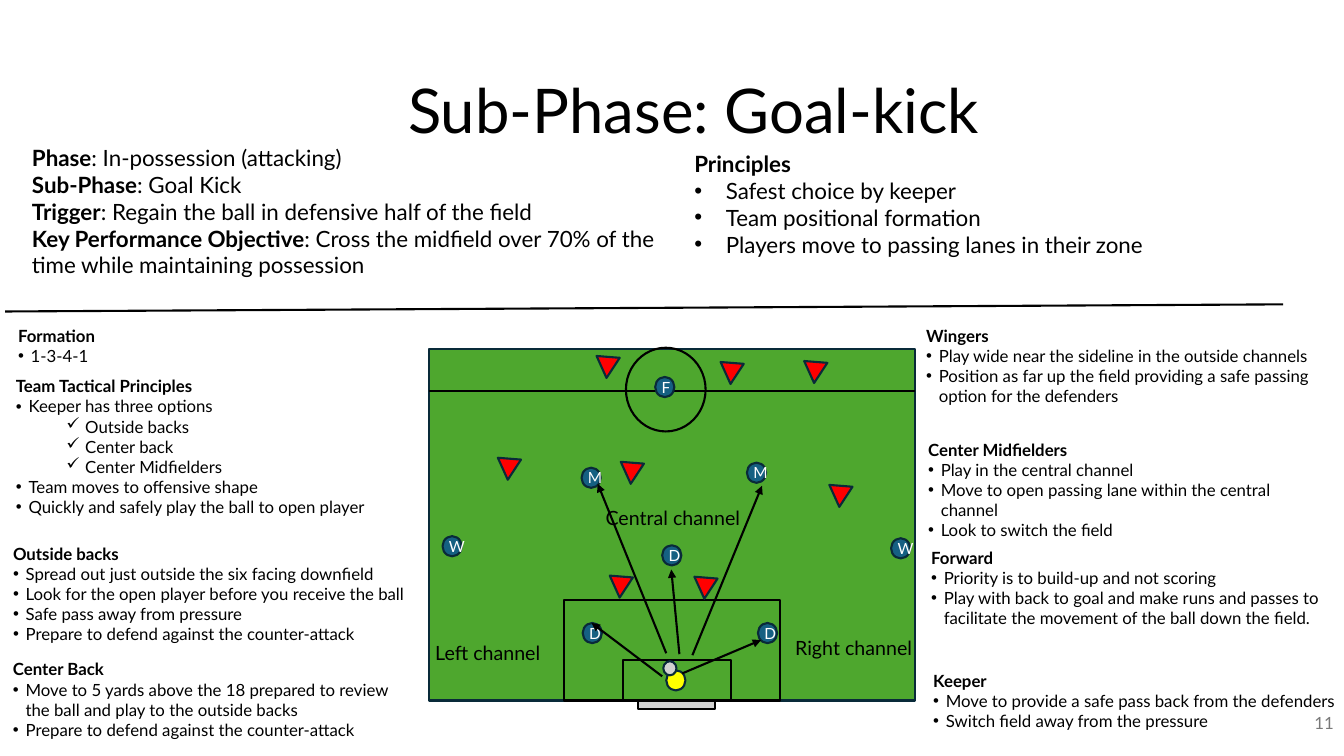
from dataclasses import dataclass

from lxml.etree import SubElement
from pptx import Presentation
from pptx.dml.color import RGBColor
from pptx.enum.shapes import MSO_CONNECTOR as Connector, MSO_SHAPE as Preset
from pptx.enum.text import MSO_ANCHOR as Anchor, MSO_AUTO_SIZE as AutoSize, PP_ALIGN as Align
from pptx.oxml.ns import qn
from pptx.util import Pt

FONT = "Lato"
BLACK, WHITE, GREY, NAVY = "000000", "FFFFFF", "D1D1D1", "092A39"
GREEN, RED, BLUE, YELLOW = "4EA72E", "FF0000", "156082", "FFFF00"
PLAYER_SIZE = (13.7, 14.4)
OPPONENT_SIZE = (16.6, 15.1)


@dataclass
class Line:
    text: str
    lead: str = ""
    bullet: str = ""


@dataclass
class Block:
    left: float
    top: float
    width: float
    height: float
    lines: list[Line]
    size: float = 12
    indent: float = 9


@dataclass
class Label:
    text: str
    left: float
    top: float
    width: float
    height: float = 24.5
    size: float = 14
    align: Align = Align.LEFT
    color: str = BLACK
    anchor: Anchor = Anchor.TOP
    wrap: bool = False
    spacing: float = 1.0


@dataclass
class Marking:
    left: float
    top: float
    width: float
    height: float
    fill: str = ""
    preset: Preset = Preset.RECTANGLE
    line: str = BLACK


@dataclass
class Player:
    role: str
    left: float
    top: float


def listing(heading: str, *items: str) -> list[Line]:
    """A bold heading with bulleted items; items starting with ✓ are one level deeper."""
    lines = [Line("", lead=heading)]
    for item in items:
        bullet = "✓" if item.startswith("✓") else "•"
        lines.append(Line(item.removeprefix("✓ "), bullet=bullet))
    return lines


BLOCKS = [
    Block(15.8, 99.4, 480.2, 123.8, [
        Line(": In-possession (attacking)", "Phase"),
        Line(": Goal Kick", "Sub-Phase"),
        Line(": Regain the ball in defensive half of the field", "Trigger"),
        Line(": Cross the midfield over 70% of the time while maintaining possession",
             "Key Performance Objective")], size=16),
    Block(488.9, 103.7, 480.2, 85, listing(
        "Principles", "Safest choice by keeper", "Team positional formation",
        "Players move to passing lanes in their zone"), size=16, indent=22.5),
    Block(5.8, 229, 294.5, 36, listing("Formation", "1-3-4-1")),
    Block(4.3, 265, 294.5, 123.8, listing(
        "Team Tactical Principles", "Keeper has three options", "✓ Outside backs",
        "✓ Center back", "✓ Center Midfielders", "Team moves to offensive shape",
        "Quickly and safely play the ball to open player")),
    Block(2.2, 384.5, 301, 79.9, listing(
        "Outside backs", "Spread out just outside the six facing downfield",
        "Look for the open player before you receive the ball",
        "Safe pass away from pressure", "Prepare to defend against the counter-attack")),
    Block(2.2, 467.3, 283.7, 65.5, listing(
        "Center Back",
        "Move to 5 yards above the 18 prepared to review the ball and play to the outside backs",
        "Prepare to defend against the counter-attack")),
    Block(654.5, 229, 298.8, 65.5, listing(
        "Wingers", "Play wide near the sideline in the outside channels",
        "Position as far up the field providing a safe passing option for the defenders")),
    Block(655.9, 310.3, 302.4, 65.5, listing(
        "Center Midfielders", "Play in the central channel",
        "Move to open passing lane within the central channel", "Look to switch the field")),
    Block(658.1, 387.4, 302.4, 79.9, listing(
        "Forward", "Priority is to build-up and not scoring",
        "Play with back to goal and make runs and passes to facilitate "
        "the movement of the ball down the field.")),
    Block(659.5, 475.2, 302.4, 65.5, listing(
        "Keeper", "Move to provide a safe pass back from the defenders",
        "Switch field away from the pressure")),
]
LABELS = [
    Label("Sub-Phase: Goal-kick", 97.2, 28.8, 797, 104.4, 44, Align.CENTER,
          anchor=Anchor.MIDDLE, wrap=True, spacing=0.9),
    Label("11", 743.8, 501.8, 216, 28.8, 12, Align.RIGHT, "797979", Anchor.MIDDLE, True),
    Label("Left channel", 303.8, 454.3, 90.7),
    Label("Right channel", 560.9, 450.7, 97.9),
    Label("Central channel", 425.5, 357.8, 112.3),
]
MARKINGS = [
    Marking(306.7, 249.1, 347, 251.3, GREEN, line=NAVY),
    Marking(403.2, 428.4, 154.1, 72),
    Marking(455.8, 500.4, 54.7, 5.8, GREY),
    Marking(445, 471.6, 77, 28.8),
    Marking(447.1, 248.4, 56.9, 59.8, preset=Preset.OVAL),
]
KEEPER = Marking(475.9, 478.8, *PLAYER_SIZE, YELLOW, Preset.OVAL, NAVY)
BALL = Marking(473.8, 472.3, 9.4, 10.1, GREY, Preset.OVAL, NAVY)
PLAYERS = [
    Player("D", 416.2, 445), Player("D", 473, 389.5), Player("D", 541.4, 445),
    Player("W", 316.1, 383), Player("W", 636.5, 384.5),
    Player("M", 415.4, 334.1), Player("M", 533.5, 330.5), Player("F", 468, 269.3),
]
OPPONENTS = [(355, 327.6), (434.9, 411.8), (425.5, 254.9), (495.4, 412.6),
             (591.8, 347), (442.8, 330.5), (573.8, 258.5), (514.1, 259.2)]
DIVIDER = (3.6, 222.5, 916.6, 217.4)
HALFWAY = (306.7, 279.4, 653.8, 279.4)
PASSES = [(473, 483.1, 422.6, 445), (485.3, 467.3, 479.5, 406.8),
          (494.6, 468, 544.3, 347), (475.9, 466.6, 427, 345.6),
          (487.4, 481, 543.6, 457.2)]


def rgb(color: str) -> RGBColor:
    return RGBColor.from_string(color)


def style(font, size: float, color: str) -> None:
    font.name, font.size, font.color.rgb = FONT, Pt(size), rgb(color)


def add_bullet(para, bullet: str, indent: float) -> None:
    properties = para._p.get_or_add_pPr()
    margin, hanging = indent, indent
    if bullet == "✓":
        para.level, margin, hanging = 1, 49.5, 13.5
    properties.set("marL", str(Pt(margin)))
    properties.set("indent", str(-Pt(hanging)))
    if bullet == "•":
        SubElement(properties, qn("a:buFont"), typeface="Arial")
    SubElement(properties, qn("a:buChar"), char=bullet)


def draw_block(page, block: Block) -> None:
    box = page.shapes.add_textbox(*map(Pt, (block.left, block.top, block.width, block.height)))
    frame = box.text_frame
    frame.word_wrap, frame.auto_size = True, AutoSize.SHAPE_TO_FIT_TEXT
    for index, line in enumerate(block.lines):
        para = frame.add_paragraph() if index else frame.paragraphs[0]
        if line.bullet:
            add_bullet(para, line.bullet, block.indent)
        style(para.font, block.size, BLACK)
        for text, bold in ((line.lead, True), (line.text, False)):
            if text:
                span = para.add_run()
                span.text, span.font.bold = text, bold


def draw_label(page, label: Label) -> None:
    box = page.shapes.add_textbox(*map(Pt, (label.left, label.top, label.width, label.height)))
    frame = box.text_frame
    frame.word_wrap, frame.vertical_anchor = label.wrap, label.anchor
    para = frame.paragraphs[0]
    para.text, para.alignment, para.line_spacing = label.text, label.align, label.spacing
    style(para.font, label.size, label.color)


def draw_marking(page, mark: Marking):
    shape = page.shapes.add_shape(
        mark.preset, *map(Pt, (mark.left, mark.top, mark.width, mark.height)))
    shape.shadow.inherit = False
    if mark.fill:
        shape.fill.solid()
        shape.fill.fore_color.rgb = rgb(mark.fill)
    else:
        shape.fill.background()
    shape.line.color.rgb, shape.line.width = rgb(mark.line), Pt(1.5)
    return shape


def draw_player(page, player: Player) -> None:
    disc = draw_marking(
        page, Marking(player.left, player.top, *PLAYER_SIZE, BLUE, Preset.OVAL, NAVY))
    para = disc.text_frame.paragraphs[0]
    para.text, para.alignment = player.role, Align.CENTER
    style(para.font, 11, WHITE)


def draw_line(page, ends: tuple[float, ...], arrow: bool = False) -> None:
    line = page.shapes.add_connector(Connector.STRAIGHT, *map(Pt, ends))
    line.line.color.rgb, line.line.width = rgb(BLACK), Pt(1.5)
    if arrow:
        SubElement(line.line._get_or_add_ln(), qn("a:tailEnd"), type="triangle")
    SubElement(line._element.spPr, qn("a:effectLst"))


def main() -> None:
    deck = Presentation()
    deck.slide_width, deck.slide_height = Pt(960), Pt(540)
    page = deck.slides.add_slide(deck.slide_layouts[6])
    for mark in MARKINGS:
        draw_marking(page, mark)
    draw_line(page, DIVIDER)
    draw_line(page, HALFWAY)
    for mark in (KEEPER, BALL):
        draw_marking(page, mark)
    for left, top in OPPONENTS:
        opponent = Marking(left, top, *OPPONENT_SIZE, RED, Preset.ISOSCELES_TRIANGLE, NAVY)
        draw_marking(page, opponent).rotation = 184.5
    for player in PLAYERS:
        draw_player(page, player)
    for ends in PASSES:
        draw_line(page, ends, arrow=True)
    for block in BLOCKS:
        draw_block(page, block)
    for label in LABELS:
        draw_label(page, label)
    deck.save("out.pptx")


if __name__ == "__main__":
    main()
